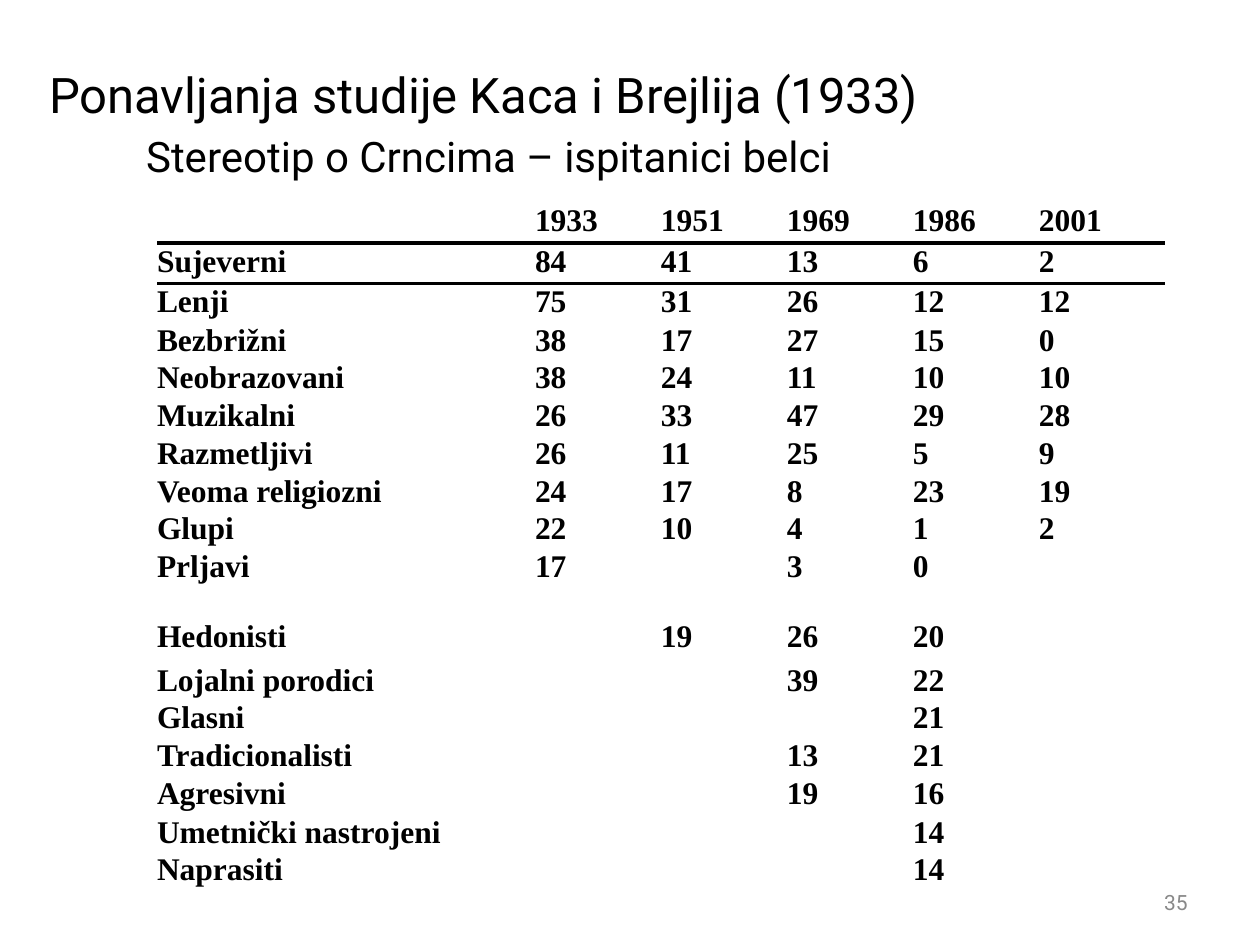
from dataclasses import dataclass

from lxml.etree import SubElement
from pptx import Presentation
from pptx.dml.color import RGBColor as Color
from pptx.oxml.ns import qn
from pptx.util import Inches, Pt

GRID_COLUMNS, GRID_ROWS = 100, 75
NO_TABLE_STYLE = "{2D5ABB26-0587-4C30-8999-92F81FD0307C}"

YEARS = ["1933", "1951", "1969", "1986", "2001"]
TRAITS = [
    ("Sujeverni", 84, 41, 13, 6, 2),
    ("Lenji", 75, 31, 26, 12, 12),
    ("Bezbrižni", 38, 17, 27, 15, 0),
    ("Neobrazovani", 38, 24, 11, 10, 10),
    ("Muzikalni", 26, 33, 47, 29, 28),
    ("Razmetljivi", 26, 11, 25, 5, 9),
    ("Veoma religiozni", 24, 17, 8, 23, 19),
    ("Glupi", 22, 10, 4, 1, 2),
    ("Prljavi", 17, None, 3, 0, None),
    ("Hedonisti", None, 19, 26, 20, None),
    ("Lojalni porodici", None, None, 39, 22, None),
    ("Glasni", None, None, None, 21, None),
    ("Tradicionalisti", None, None, 13, 21, None),
    ("Agresivni", None, None, 19, 16, None),
    ("Umetnički nastrojeni", None, None, None, 14, None),
    ("Naprasiti", None, None, None, 14, None),
]
COLUMN_WIDTHS = [26.3, 11.2, 10, 10, 10, 12.5]
COLUMN_INDENTS = [0, 3.7, 2.5, 2.5, 2.5, 2.5]
ROW_HEIGHTS = {0: 2.8, 1: 3.2, 2: 2.8, 3: 3.2, 9: 4.5, 10: 4.5, 14: 2.8, 15: 3.2, 16: 2.7}
ROW_SPACINGS = {0: 0.84, 1: 1, 3: Pt(22), 10: 1, 15: Pt(22)}
ROW_TOP_INSETS = {1: 0.1, 10: 1.1}
RULED_ROWS = {0: ["lnB"], 1: ["lnT", "lnB"]}


@dataclass(frozen=True)
class Theme:
    ink: str = "000000"
    muted: str = "898989"
    heading_font: str = "Roboto"
    table_font: str = "Times New Roman"
    title_size: float = 28
    subtitle_size: float = 24
    table_size: float = 18
    table_leading: float = 20.5
    empty_size: float = 12
    number_size: float = 12
    rule_width: float = 2.25


def write(paragraph, text, *, font, size, color, bold=False, indent=0, spacing=1):
    properties = paragraph._p.get_or_add_pPr()
    properties.set("marL", str(indent))
    properties.set("indent", "0")
    paragraph.line_spacing = spacing
    run = paragraph.add_run()
    run.text = text
    run.font.name = font
    run.font.size = Pt(size)
    run.font.bold = bold
    run.font.color.rgb = Color.from_string(color)


class SlideBuilder:
    def __init__(self, presentation, theme):
        self.theme = theme
        self.width = presentation.slide_width
        self.height = presentation.slide_height
        self.slide = presentation.slides.add_slide(presentation.slide_layouts[6])

    def across(self, columns):
        return round(self.width * columns / GRID_COLUMNS)

    def down(self, rows):
        return round(self.height * rows / GRID_ROWS)

    def text(self, left, top, width, height, lines, *, top_inset=0.1):
        box = self.slide.shapes.add_textbox(
            self.across(left), self.down(top), self.across(width), self.down(height)
        )
        frame = box.text_frame
        frame.word_wrap = True
        frame.margin_left = frame.margin_right = frame.margin_bottom = 0
        frame.margin_top = self.down(top_inset)
        for index, (content, style) in enumerate(lines):
            paragraph = frame.add_paragraph() if index else frame.paragraphs[0]
            write(paragraph, content, **style)

    def rule(self, cell, side):
        line = SubElement(cell._tc.get_or_add_tcPr(), qn(f"a:{side}"))
        line.set("w", str(Pt(self.theme.rule_width)))
        fill = SubElement(line, qn("a:solidFill"))
        SubElement(fill, qn("a:srgbClr")).set("val", self.theme.ink)

    def cell(self, cell, value, row, column):
        cell.margin_left = cell.margin_right = cell.margin_bottom = 0
        cell.margin_top = self.down(ROW_TOP_INSETS.get(row, 0))
        for side in RULED_ROWS.get(row, []):
            self.rule(cell, side)
        cell.fill.background()
        paragraph = cell.text_frame.paragraphs[0]
        if value is None:
            ending = SubElement(paragraph._p, qn("a:endParaRPr"))
            ending.set("sz", str(self.theme.empty_size * 100))
            return
        write(
            paragraph,
            str(value),
            font=self.theme.table_font,
            size=self.theme.table_size,
            color=self.theme.ink,
            bold=True,
            indent=self.across(COLUMN_INDENTS[column]),
            spacing=ROW_SPACINGS.get(row, Pt(self.theme.table_leading)),
        )

    def table(self, left, top, records):
        heights = [ROW_HEIGHTS.get(row, 3) for row in range(len(records))]
        frame = self.slide.shapes.add_table(
            len(records), len(COLUMN_WIDTHS), self.across(left), self.down(top),
            self.across(sum(COLUMN_WIDTHS)), self.down(sum(heights)),
        )
        table = frame.table
        table.first_row = table.horz_banding = False
        for style in frame._element.iter(qn("a:tableStyleId")):
            style.text = NO_TABLE_STYLE
        for column, width in zip(table.columns, COLUMN_WIDTHS):
            column.width = self.across(width)
        for row, height in zip(table.rows, heights):
            row.height = self.down(height)
        for row, record in enumerate(records):
            for column, value in enumerate(record):
                self.cell(table.cell(row, column), value, row, column)


def main():
    presentation = Presentation()
    presentation.slide_width, presentation.slide_height = Inches(10), Inches(7.5)
    theme = Theme()
    builder = SlideBuilder(presentation, theme)

    number = dict(font=theme.heading_font, size=theme.number_size, color=theme.muted)
    heading = dict(font=theme.heading_font, color=theme.ink, spacing=1.15)
    title = dict(heading, size=theme.title_size, indent=builder.across(0.1))
    subtitle = dict(heading, size=theme.subtitle_size, indent=builder.across(7.8))

    builder.text(92.1, 70.5, 2.3, 2.3, [("35", dict(number, indent=builder.across(0.3)))])
    builder.table(12.46, 16.5, [(None, *YEARS), *TRAITS])
    builder.text(3.8, 4.3, 73.7, 8.6, [
        ("Ponavljanja studije Kaca i Brejlija (1933)", title),
        ("Stereotip o Crncima – ispitanici belci", subtitle),
    ])
    presentation.save("out.pptx")


if __name__ == "__main__":
    main()
